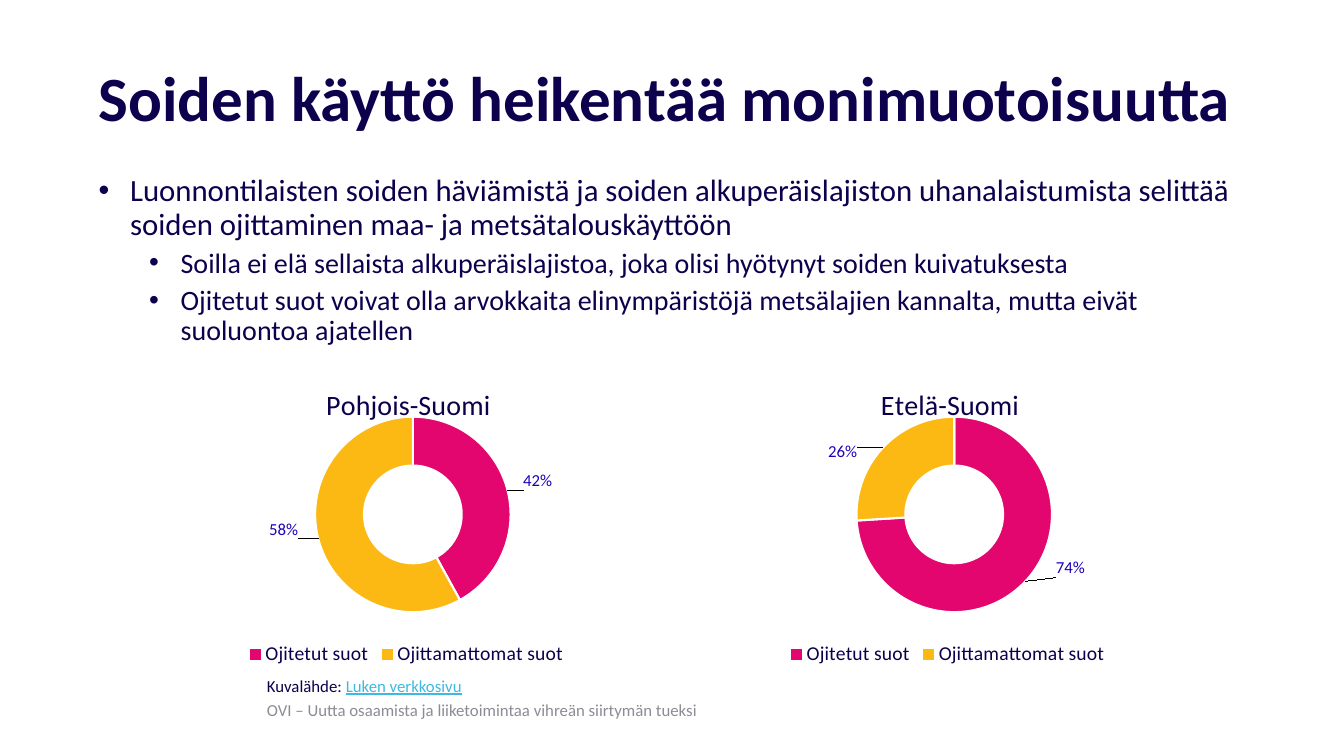
"""Build a slide on mire use, with two doughnut charts of drained and undrained mires."""
from lxml.etree import SubElement
from pptx import Presentation
from pptx.chart.data import CategoryChartData
from pptx.dml.color import RGBColor
from pptx.enum.chart import XL_CHART_TYPE, XL_LEGEND_POSITION
from pptx.enum.text import MSO_ANCHOR, PP_ALIGN
from pptx.oxml import parse_xml
from pptx.oxml.ns import nsdecls, qn
from pptx.util import Pt

NAVY = RGBColor(0x0D, 0x00, 0x4C)
CHART_NAVY = RGBColor(0x0D, 0x00, 0x4B)
GREY = RGBColor(0x8C, 0x8C, 0x96)
LINK_BLUE = RGBColor(0x3F, 0xB9, 0xE3)
LABEL_BLUE = RGBColor(0x20, 0x00, 0xB8)
PINK = RGBColor(0xE2, 0x06, 0x6E)
YELLOW = RGBColor(0xFD, 0xB9, 0x13)
WHITE = RGBColor(0xFF, 0xFF, 0xFF)
FONT = "Calibri"

TITLE = "Soiden käyttö heikentää monimuotoisuutta"
BULLETS = [
    (0, "Luonnontilaisten soiden häviämistä ja soiden alkuperäislajiston "
        "uhanalaistumista selittää soiden ojittaminen maa- ja metsätalouskäyttöön"),
    (1, "Soilla ei elä sellaista alkuperäislajistoa, joka olisi hyötynyt soiden kuivatuksesta"),
    (1, "Ojitetut suot voivat olla arvokkaita elinympäristöjä metsälajien kannalta, "
        "mutta eivät suoluontoa ajatellen"),
]
LEVELS = [{"indent": 22.5, "size": 22, "before": 10}, {"indent": 58.5, "size": 20, "before": 5}]
HANGING = 22.5
SOURCE = [("Kuvalähde: ", CHART_NAVY, False), ("Luken verkkosivu", LINK_BLUE, True)]
FOOTER = "OVI – Uutta osaamista ja liiketoimintaa vihreän siirtymän tueksi"
CATEGORIES = ["Ojitetut suot", "Ojittamattomat suot"]
SLICE_COLOURS = [PINK, YELLOW]
CHARTS = [
    {"title": "Pohjois-Suomi", "left": 130.3, "title_x": 0.31, "values": [0.42, 0.58],
     "label_shifts": [(0.12, -0.05), (-0.13, -0.01)]},
    {"title": "Etelä-Suomi", "left": 517, "title_x": 0.34, "values": [0.74, 0.26],
     "label_shifts": [(0.14, 0.01), (-0.13, -0.04)]},
]
CHART_TOP, CHART_WIDTH, CHART_HEIGHT = 260.6, 319.7, 218.2


def style(font, size, colour, bold=False):
    font.name, font.size, font.bold = FONT, Pt(size), bold
    font.color.rgb = colour


def add_box(page, left, top, width, height, anchor=MSO_ANCHOR.TOP):
    frame = page.shapes.add_textbox(Pt(left), Pt(top), Pt(width), Pt(height)).text_frame
    frame.word_wrap = True
    frame.vertical_anchor = anchor
    return frame


def manual_layout(**settings):
    tags = "".join(f'<c:{name} val="{value}"/>' for name, value in settings.items())
    return parse_xml(f'<c:layout {nsdecls("c")}><c:manualLayout>{tags}'
                     '</c:manualLayout></c:layout>')


def replace_layout(parent, layout, index):
    for old in parent.findall(qn("c:layout")):
        parent.remove(old)
    parent.insert(index, layout)


def add_title(page):
    title = page.shapes.title
    title.left, title.top, title.width, title.height = Pt(63.4), Pt(41), Pt(828.7), Pt(62.6)
    frame = title.text_frame
    frame.text = TITLE
    frame.word_wrap = True
    frame.vertical_anchor = MSO_ANCHOR.MIDDLE
    para = frame.paragraphs[0]
    para.alignment = PP_ALIGN.LEFT
    para.line_spacing = 0.9
    style(para.font, 45, NAVY, True)


def add_bullets(page):
    frame = add_box(page, 63.4, 121.7, 828.7, 310.3)
    for number, (level, text) in enumerate(BULLETS):
        para = frame.add_paragraph() if number else frame.paragraphs[0]
        look = LEVELS[level]
        para.text, para.level, para.line_spacing = text, level, 0.9
        para.space_before = Pt(look["before"] if number else 0)
        properties = para._p.get_or_add_pPr()
        properties.set("marL", str(Pt(look["indent"])))
        properties.set("indent", str(-Pt(HANGING)))
        SubElement(properties, qn("a:buFont")).set("typeface", "Arial")
        SubElement(properties, qn("a:buChar")).set("char", "•")
        style(para.font, look["size"], NAVY)


def add_doughnut(page, content):
    data = CategoryChartData(number_format="0%")
    data.categories = CATEGORIES
    data.add_series("Series 1", content["values"])
    chart = page.shapes.add_chart(XL_CHART_TYPE.DOUGHNUT, Pt(content["left"]), Pt(CHART_TOP),
                                  Pt(CHART_WIDTH), Pt(CHART_HEIGHT), data).chart
    style(chart.font, 10, CHART_NAVY)

    chart.has_title = True
    heading = chart.chart_title.text_frame
    heading.text = content["title"]
    style(heading.paragraphs[0].font, 20, CHART_NAVY)
    replace_layout(chart.chart_title._element,
                   manual_layout(xMode="edge", yMode="edge", x=content["title_x"], y=0.05), 1)

    chart.has_legend = True
    chart.legend.position = XL_LEGEND_POSITION.BOTTOM
    chart.legend.include_in_layout = False
    style(chart.legend.font, 14, CHART_NAVY)

    plot = chart.plots[0]
    plot.vary_by_categories = True
    plot._element.find(qn("c:holeSize")).set("val", "64")
    replace_layout(plot._element.getparent(),
                   manual_layout(layoutTarget="inner", xMode="edge", yMode="edge",
                                 x=0.28, y=0.17, w=0.47, h=0.64), 0)

    series = plot.series[0]
    labels = series.data_labels
    labels.show_value = True
    labels.number_format, labels.number_format_is_linked = "0%", False
    style(labels.font, 12, LABEL_BLUE)
    for index, (colour, shift) in enumerate(zip(SLICE_COLOURS, content["label_shifts"])):
        point = series.points[index]
        point.format.fill.solid()
        point.format.fill.fore_color.rgb = colour
        point.format.line.color.rgb = WHITE
        point.format.line.width = Pt(1.5)
        style(point.data_label.font, 12, LABEL_BLUE)
        label = series._element.findall(f".//{qn('c:dLbl')}")[index]
        label.insert(1, manual_layout(x=shift[0], y=shift[1]))
        label.insert(2, parse_xml(
            f'<c:numFmt {nsdecls("c")} formatCode="0%" sourceLinked="0"/>'))


def add_source_and_footer(page):
    footer = add_box(page, 183.6, 491, 438.5, 31.7, MSO_ANCHOR.MIDDLE).paragraphs[0]
    footer.text = FOOTER
    style(footer.font, 12, GREY)
    source = add_box(page, 183.6, 478.8, 319.7, 21.6).paragraphs[0]
    for text, colour, underlined in SOURCE:
        span = source.add_run()
        span.text = text
        style(span.font, 12, colour)
        span.font.underline = underlined


def main():
    deck = Presentation()
    deck.slide_width, deck.slide_height = Pt(960), Pt(540)
    page = deck.slides.add_slide(deck.slide_layouts[5])
    add_title(page)
    add_bullets(page)
    for content in CHARTS:
        add_doughnut(page, content)
    add_source_and_footer(page)
    deck.save("out.pptx")


if __name__ == "__main__":
    main()
